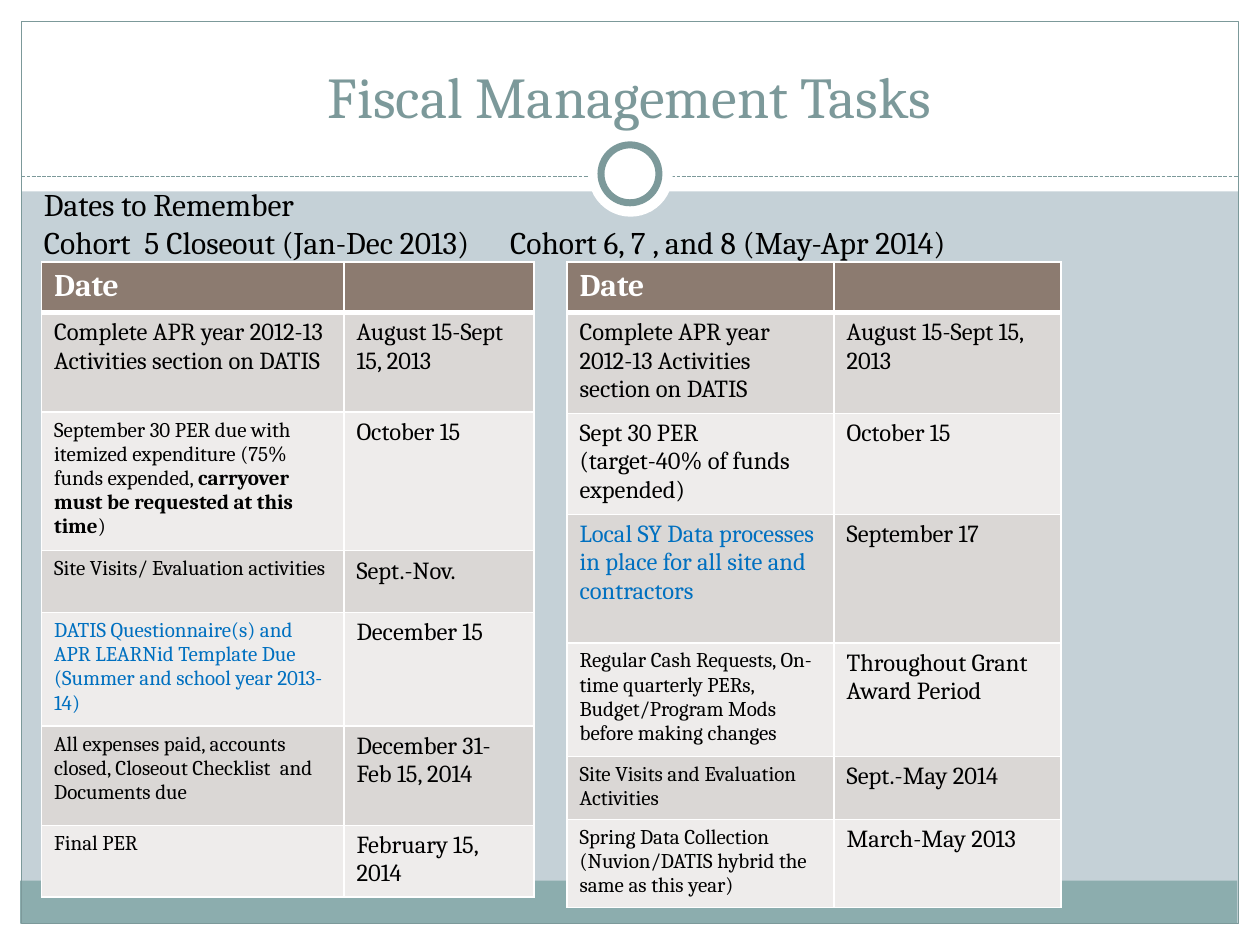
from dataclasses import dataclass

from lxml.etree import SubElement
from pptx import Presentation
from pptx.dml.color import RGBColor
from pptx.enum.dml import MSO_LINE
from pptx.enum.shapes import MSO_CONNECTOR, MSO_SHAPE as Geom
from pptx.enum.text import MSO_ANCHOR, MSO_AUTO_SIZE, PP_ALIGN
from pptx.oxml.ns import qn
from pptx.util import Inches, Pt

FONT = "Cambria"
WHITE = RGBColor(0xFF, 0xFF, 0xFF)
BLACK = RGBColor(0, 0, 0)
BLUE = RGBColor(0x00, 0x70, 0xC0)
TEAL = RGBColor(0x7C, 0x99, 0x9A)
FOOT = RGBColor(0x8C, 0xAD, 0xAE)
MIST = RGBColor(0xC5, 0xD1, 0xD7)
BROWN = RGBColor(0x8C, 0x7B, 0x70)
BANDS = (RGBColor(0xDA, 0xD7, 0xD5), RGBColor(0xEE, 0xEC, 0xEB))


@dataclass
class Panel:
    box: tuple
    fill: RGBColor | None = WHITE
    line: RGBColor | None = None
    width: float = 0.75
    geom: Geom = Geom.RECTANGLE


@dataclass
class Task:
    """One table row; every second piece of the text is bold."""
    texts: tuple
    date: str
    height: float
    size: int = 12
    color: RGBColor = BLACK


@dataclass
class Plan:
    left: float
    cols: tuple
    head: float
    tasks: list


FRAME = [
    Panel((0, 7.33, 10, 0.17)),
    Panel((0, 0, 10, 1.52)),
    Panel((0, 0, 0.17, 7.5)),
    Panel((9.83, 0, 0.17, 7.5)),
    Panel((0.16, 6.99, 9.66, 0.34), FOOT),
    Panel((0.17, 0.17, 9.66, 7.16), None, TEAL),
]
RING = [
    Panel((4.67, 1.05, 0.67, 0.67), geom=Geom.OVAL),
    Panel((4.77, 1.15, 0.46, 0.46), line=TEAL, width=4, geom=Geom.OVAL),
]

REPORT = Task(("Complete APR year 2012-13 Activities section on DATIS",),
              "August 15-Sept 15, 2013", 0.79, 14)
PLANS = [
    Plan(4.5, (2.12, 1.8), 0.35, [
        REPORT,
        Task(("Sept 30 PER (target-40% of funds expended)",), "October 15", 0.79, 14),
        Task(("Local SY Data processes in place for all site and contractors",),
             "September 17", 1.02, 14, BLUE),
        Task(("Regular Cash Requests, On-time quarterly PERs, "
              "Budget/Program Mods before making changes",),
             "Throughout Grant Award Period", 0.89),
        Task(("Site Visits and Evaluation Activities",), "Sept.-May 2014", 0.5),
        Task(("Spring Data Collection (Nuvion/DATIS hybrid the same as this year)",),
             "March-May 2013", 0.69),
    ]),
    Plan(0.33, (2.4, 1.51), 0.39, [
        REPORT,
        Task(("September 30 PER due with itemized expenditure (75% funds expended, ",
              "carryover must be requested at this time", ")"), "October 15", 1.08),
        Task(("Site Visits/ Evaluation activities",), "Sept.-Nov.", 0.49),
        Task(("DATIS Questionnaire(s) and APR LEARNid Template Due "
              "(Summer and school year 2013-14)",), "December 15", 0.89, color=BLUE),
        Task(("All expenses paid, accounts closed, Closeout Checklist  and Documents due",),
             "December 31-Feb 15, 2014", 0.79),
        Task(("Final PER",), "February 15, 2014", 0.56),
    ]),
]


def write(para, text: str, size: float = 18, color: RGBColor = BLACK,
          bold: bool = False, align=None) -> None:
    run = para.add_run()
    run.text = text
    font = run.font
    font.name, font.size, font.bold = FONT, Pt(size), bold
    font.color.rgb = color
    if align is not None:
        para.alignment = align


def draw(slide, panel: Panel) -> None:
    shape = slide.shapes.add_shape(panel.geom, *map(Inches, panel.box))
    shape.shadow.inherit = False
    if panel.fill is None:
        shape.fill.background()
    else:
        shape.fill.solid()
        shape.fill.fore_color.rgb = panel.fill
    if panel.line is None:
        shape.line.fill.background()
    else:
        shape.line.color.rgb = panel.line
        shape.line.width = Pt(panel.width)


def rule(slide) -> None:
    y = Inches(1.4)
    line = slide.shapes.add_connector(
        MSO_CONNECTOR.STRAIGHT, Inches(0.17), y, Inches(9.83), y)
    line.line.color.rgb = TEAL
    line.line.width = Pt(0.75)
    line.line.dash_style = MSO_LINE.SQUARE_DOT
    SubElement(line._element.spPr, qn("a:effectLst"))


def paint(cell, fill: RGBColor, top: float = 1, base: float = 1) -> None:
    """Give a cell its white borders and its fill."""
    props = cell._tc.get_or_add_tcPr()
    for side, width in (("L", 1), ("R", 1), ("T", top), ("B", base)):
        edge = SubElement(props, qn(f"a:ln{side}"), w=str(Pt(width)))
        SubElement(SubElement(edge, qn("a:solidFill")), qn("a:srgbClr"), val=str(WHITE))
    cell.fill.solid()
    cell.fill.fore_color.rgb = fill


def tabulate(slide, plan: Plan) -> None:
    sizes = [plan.head] + [task.height for task in plan.tasks]
    table = slide.shapes.add_table(
        len(sizes), 2, Inches(plan.left), Inches(2.08),
        Inches(sum(plan.cols)), Inches(sum(sizes))).table
    for col, width in zip(table.columns, plan.cols):
        col.width = Inches(width)
    for row, height in zip(table.rows, sizes):
        row.height = Inches(height)
    for cell in table.rows[0].cells:
        paint(cell, BROWN, base=3)
    write(table.cell(0, 0).text_frame.paragraphs[0], "Date", color=WHITE, bold=True)
    for i, task in enumerate(plan.tasks):
        name, date = table.rows[i + 1].cells
        for cell in (name, date):
            paint(cell, BANDS[i % 2], top=1 if i else 3)
        for j, text in enumerate(task.texts):
            write(name.text_frame.paragraphs[0], text, task.size, task.color, j % 2 == 1)
        write(date.text_frame.paragraphs[0], task.date, 14)


def intro(slide) -> None:
    box = slide.shapes.add_textbox(*map(Inches, (0.25, 1.42, 9.08, 1.31)))
    frame = box.text_frame
    frame.word_wrap = True
    write(frame.paragraphs[0], "Dates to Remember")
    para = frame.add_paragraph()
    write(para, "Cohort  5 Closeout (Jan-Dec 2013)\tCohort 6, 7 , and 8 (May-Apr 2014)")
    tabs = SubElement(para._p.get_or_add_pPr(), qn("a:tabLst"))
    SubElement(tabs, qn("a:tab"), pos=str(Inches(3.7)), algn="l")


def head(slide) -> None:
    title = slide.shapes.title
    title.left, title.top, title.width, title.height = map(
        Inches, (0.33, 0.25, 9.33, 0.83))
    frame = title.text_frame
    frame.auto_size = MSO_AUTO_SIZE.NONE
    frame.vertical_anchor = MSO_ANCHOR.BOTTOM
    write(frame.paragraphs[0], "Fiscal Management Tasks", 33, TEAL, align=PP_ALIGN.CENTER)
    # Lift the title above the white panels
    slide.shapes._spTree.append(title._element)


def main() -> None:
    deck = Presentation()
    deck.slide_width, deck.slide_height = Inches(10), Inches(7.5)
    slide = deck.slides.add_slide(deck.slide_layouts[5])
    slide.background.fill.solid()
    slide.background.fill.fore_color.rgb = MIST
    for panel in FRAME:
        draw(slide, panel)
    rule(slide)
    for panel in RING:
        draw(slide, panel)
    head(slide)
    intro(slide)
    for plan in PLANS:
        tabulate(slide, plan)
    deck.save("out.pptx")


if __name__ == "__main__":
    main()
